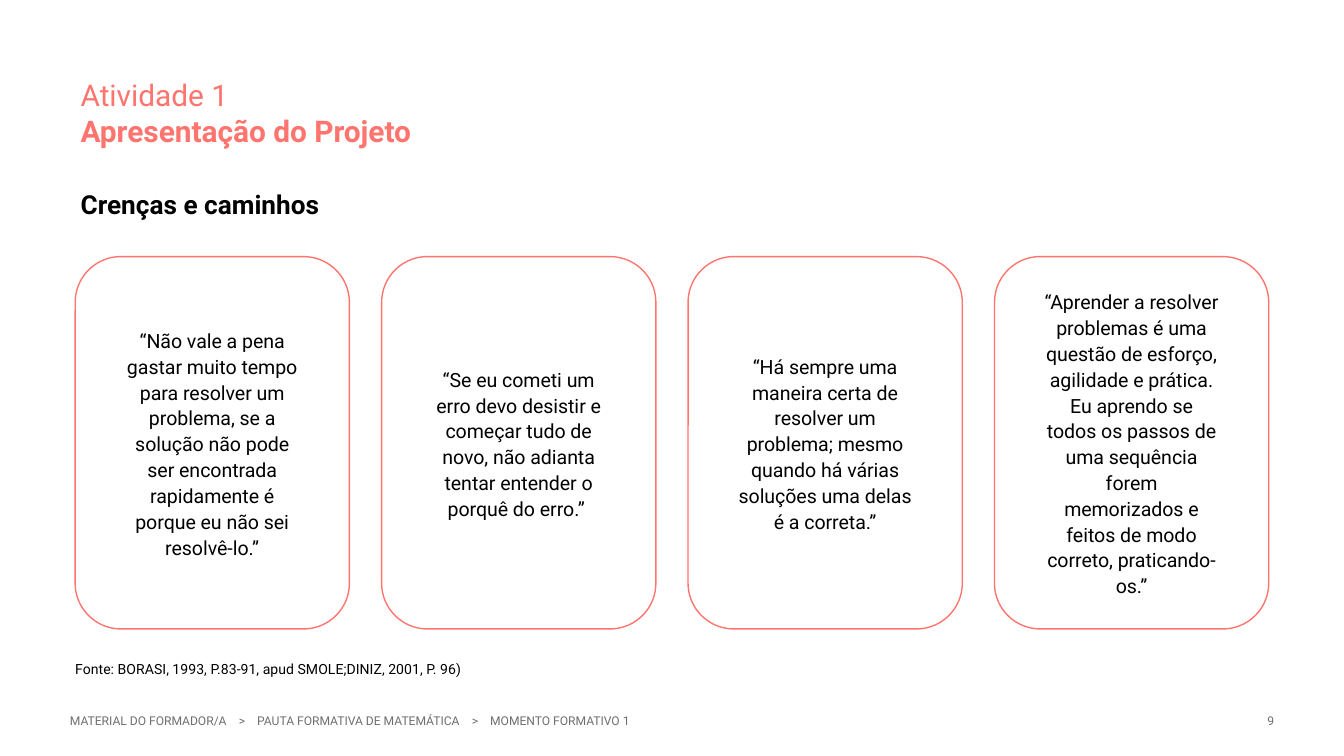
from dataclasses import dataclass

from pptx import Presentation
from pptx.dml.color import RGBColor
from pptx.enum.shapes import MSO_SHAPE
from pptx.enum.text import MSO_ANCHOR, PP_ALIGN
from pptx.util import Inches, Pt

ROUNDED = MSO_SHAPE.ROUNDED_RECTANGLE
TOP, MIDDLE, BOTTOM = MSO_ANCHOR.TOP, MSO_ANCHOR.MIDDLE, MSO_ANCHOR.BOTTOM
LEFT, CENTER, RIGHT = PP_ALIGN.LEFT, PP_ALIGN.CENTER, PP_ALIGN.RIGHT


@dataclass(frozen=True)
class Theme:
    font: str = "Roboto"
    coral: RGBColor = RGBColor(0xFF, 0x74, 0x6E)
    black: RGBColor = RGBColor(0, 0, 0)
    gray: RGBColor = RGBColor(0x6F, 0x6F, 0x6E)
    white: RGBColor = RGBColor(0xFF, 0xFF, 0xFF)
    title: float = 16
    subtitle: float = 14
    quote: float = 10.5
    source: float = 7.5
    footer: float = 6.5


class SlideBuilder:
    def __init__(self, page, theme):
        self.page = page
        self.theme = theme

    def style(self, para, size, color, bold=False, align=LEFT, spacing=1.0):
        para.alignment = align
        para.line_spacing = spacing
        for span in para.runs:
            span.font.name = self.theme.font
            span.font.size = Pt(size)
            span.font.bold = bold
            span.font.color.rgb = color

    def frame(self, shape, anchor, inset_x=0, inset_y=0):
        frame = shape.text_frame
        frame.word_wrap = True
        frame.vertical_anchor = anchor
        frame.margin_left = frame.margin_right = Inches(inset_x)
        frame.margin_top = frame.margin_bottom = Inches(inset_y)
        return frame

    def text(self, area, content, size, color, anchor=MIDDLE, align=LEFT, spacing=1.0):
        box = self.page.shapes.add_textbox(*map(Inches, area))
        frame = self.frame(box, anchor)
        frame.text = content
        self.style(frame.paragraphs[0], size, color, align=align, spacing=spacing)

    def heading(self, area, activity, title, subtitle):
        theme = self.theme
        box = self.page.shapes.add_textbox(*map(Inches, area))
        frame = self.frame(box, TOP)
        frame.text = "\n".join((activity, title, subtitle))
        first, second, third = frame.paragraphs
        self.style(first, theme.title, theme.coral)
        self.style(second, theme.title, theme.coral, bold=True)
        self.style(third, theme.subtitle, theme.black, bold=True, spacing=1.15)
        third.space_before = Pt(19.25)
        for para in frame.paragraphs:
            properties = para._p.get_or_add_pPr()
            properties.set("marL", str(Inches(0.04)))
            properties.set("indent", "0")

    def card(self, area, quote):
        theme = self.theme
        card = self.page.shapes.add_shape(ROUNDED, *map(Inches, area))
        card.adjustments[0] = 1 / 6
        card.shadow.inherit = False
        card.fill.solid()
        card.fill.fore_color.rgb = theme.white
        card.line.color.rgb = theme.coral
        card.line.width = Pt(0.75)
        frame = self.frame(card, MIDDLE, 0.27, 0.39)
        frame.text = quote
        self.style(frame.paragraphs[0], theme.quote, theme.black, align=CENTER, spacing=1.1)

    def breadcrumb(self, area, steps):
        box = self.page.shapes.add_textbox(*map(Inches, area))
        para = self.frame(box, MIDDLE).paragraphs[0]
        para.text = steps[0]
        for step in steps[1:]:
            for piece in (" ", ">", " ", step):
                span = para.add_run()
                span.text = piece
                if piece == " ":
                    span._r.get_or_add_rPr().set("spc", "480")
        self.style(para, self.theme.footer, self.theme.gray)


QUOTES = (
    "“Não vale a pena gastar muito tempo para resolver um problema, se a solução "
    "não pode ser encontrada rapidamente é porque eu não sei resolvê-lo.”",
    "“Se eu cometi um erro devo desistir e começar tudo de novo, não adianta "
    "tentar entender o porquê do erro.” ",
    "“Há sempre uma maneira certa de resolver um problema; mesmo quando há várias "
    "soluções uma delas é a correta.”",
    "“Aprender a resolver problemas é uma questão de esforço, agilidade e prática. "
    "Eu aprendo se todos os passos de uma sequência forem memorizados e feitos de "
    "modo correto, praticando-os.”",
)
STEPS = ("MATERIAL DO FORMADOR/A", "PAUTA FORMATIVA DE MATEMÁTICA", "MOMENTO FORMATIVO 1")
MARGIN, CARD_TOP, CARD_WIDTH, CARD_HEIGHT, CARD_PITCH = 0.56, 1.91, 2.04, 2.77, 2.28


def main():
    deck = Presentation()
    deck.slide_width = Inches(10)
    deck.slide_height = deck.slide_width * 9 // 16
    theme = Theme()
    builder = SlideBuilder(deck.slides.add_slide(deck.slide_layouts[6]), theme)

    builder.breadcrumb((0.52, 5.1, 6.48, 0.53), STEPS)
    builder.text((8.88, 5.1, 0.6, 0.53), "9", theme.footer, theme.gray, align=RIGHT)
    builder.heading((MARGIN, 0.57, 2.59, 1.48),
                    "Atividade 1", "Apresentação do Projeto", "Crenças e caminhos")
    for index, quote in enumerate(QUOTES):
        left = MARGIN + index * CARD_PITCH
        builder.card((left, CARD_TOP, CARD_WIDTH, CARD_HEIGHT), quote)
    builder.text((MARGIN, 4.82, 3.93, 0.22),
                 "Fonte: BORASI, 1993, P.83-91, apud SMOLE;DINIZ, 2001, P. 96)",
                 theme.source, theme.black, anchor=BOTTOM, spacing=1.1)

    deck.save("out.pptx")


if __name__ == "__main__":
    main()
